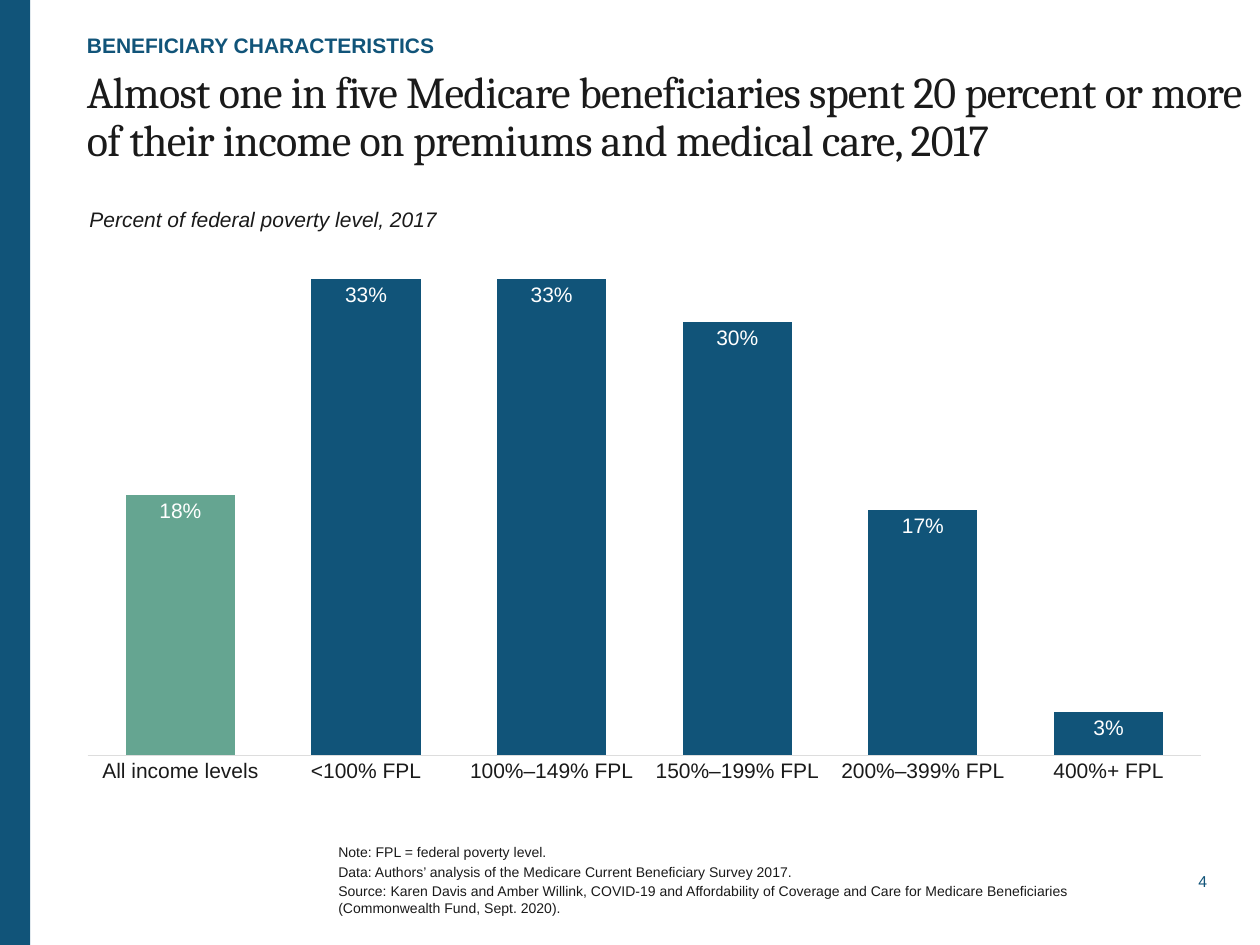
from lxml import etree
from pptx import Presentation
from pptx.chart.data import CategoryChartData
from pptx.dml.color import RGBColor
from pptx.enum.chart import XL_CHART_TYPE, XL_LABEL_POSITION, XL_TICK_MARK
from pptx.enum.shapes import MSO_SHAPE
from pptx.enum.text import MSO_ANCHOR, MSO_AUTO_SIZE, PP_ALIGN
from pptx.oxml.ns import qn
from pptx.util import Pt

COLORS = {
    "blue": "115479",
    "green": "65A591",
    "ink": "1A1A1A",
    "axis": "DDDDDD",
    "white": "FFFFFF",
}


class SlideBuilder:
    """Holds the style and the current slide."""

    def __init__(self, presentation, layout):
        self.slide = presentation.slides.add_slide(layout)

    def color(self, name):
        return RGBColor.from_string(COLORS[name])

    def style_font(self, font, color="ink", **values):
        settings = {"name": "Arial", "size": 12, **values}
        settings["size"] = Pt(settings["size"])
        for name, value in settings.items():
            setattr(font, name, value)
        font.color.rgb = self.color(color)

    def place(self, shape, box):
        for name, value in zip(("left", "top", "width", "height"), box):
            setattr(shape, name, Pt(value))

    def bar(self, box, color):
        shape = self.slide.shapes.add_shape(MSO_SHAPE.RECTANGLE, *map(Pt, box))
        shape.shadow.inherit = False
        shape.fill.solid()
        shape.fill.fore_color.rgb = self.color(color)
        shape.line.fill.background()

    def fill_text(self, shape, paragraphs, anchor=MSO_ANCHOR.TOP, wrap=True,
                  align=PP_ALIGN.LEFT, line_spacing=1.0, gap=0, tracking=0, **font):
        frame = shape.text_frame
        frame_values = {
            "word_wrap": wrap, "auto_size": MSO_AUTO_SIZE.NONE,
            "vertical_anchor": anchor, "margin_left": 0, "margin_top": 0,
            "margin_right": 0, "margin_bottom": 0,
        }
        for name, value in frame_values.items():
            setattr(frame, name, value)
        for index, text in enumerate(paragraphs):
            paragraph = frame.add_paragraph() if index else frame.paragraphs[0]
            paragraph.alignment = align
            paragraph.line_spacing = line_spacing
            paragraph.space_before = Pt(gap if index else 0)
            run = paragraph.add_run()
            run.text = text
            self.style_font(run.font, **font)
            if tracking:
                run.font._element.set("spc", str(int(tracking * 100)))

    def placeholder(self, index, box, text, **style):
        shape = self.slide.placeholders[index]
        self.place(shape, box)
        self.fill_text(shape, [text], **style)

    def text(self, box, paragraphs, **style):
        shape = self.slide.shapes.add_textbox(*map(Pt, box))
        self.fill_text(shape, paragraphs, **style)

    def column_chart(self, box, values, color, highlight, maximum, plot):
        data = CategoryChartData(number_format="0%")
        data.categories = list(values)
        data.add_series("Series 1", values.values())
        chart = self.slide.shapes.add_chart(
            XL_CHART_TYPE.COLUMN_CLUSTERED, *map(Pt, box), data).chart
        chart.has_legend = chart.has_title = False
        self.style_font(chart.font, size=10)

        # Axes
        category_axis, value_axis = chart.category_axis, chart.value_axis
        category_axis.major_tick_mark = XL_TICK_MARK.NONE
        category_axis.format.line.color.rgb = self.color("axis")
        category_axis.format.line.width = Pt(0.75)
        self.style_font(category_axis.tick_labels.font)
        axis_values = {
            "visible": False, "has_major_gridlines": False,
            "minimum_scale": 0, "maximum_scale": maximum,
        }
        for name, value in axis_values.items():
            setattr(value_axis, name, value)

        # Columns, with the first one set apart
        columns = chart.plots[0]
        columns.gap_width = 70
        columns.vary_by_categories = False
        series = columns.series[0]
        for part, name in ((series, color), (series.points[0], highlight)):
            part.format.fill.solid()
            part.format.fill.fore_color.rgb = self.color(name)

        # Value labels
        labels = series.data_labels
        label_values = {
            "show_value": True, "position": XL_LABEL_POSITION.INSIDE_END,
            "number_format": "0%", "number_format_is_linked": False,
        }
        for name, value in label_values.items():
            setattr(labels, name, value)
        self.style_font(labels.font, color="white")

        # Fixed inner plot area
        plot_area = chart._chartSpace.chart.plotArea
        for old in plot_area.findall(qn("c:layout")):
            plot_area.remove(old)
        layout = etree.Element(qn("c:layout"))
        plot_area.insert(0, layout)
        manual = etree.SubElement(layout, qn("c:manualLayout"))
        settings = {"layoutTarget": "inner", "xMode": "edge", "yMode": "edge",
                    **dict(zip("xywh", plot))}
        for name, value in settings.items():
            etree.SubElement(manual, qn(f"c:{name}")).set("val", str(value))


def main():
    presentation = Presentation()
    presentation.slide_width, presentation.slide_height = Pt(720), Pt(540)
    builder = SlideBuilder(presentation, presentation.slide_layouts[0])

    # Side band and page number
    builder.bar((0, 0, 17.3, 540), "blue")
    builder.text((667.5, 495.4, 22.3, 15.8), ["4"], anchor=MSO_ANCHOR.MIDDLE,
                 wrap=False, align=PP_ALIGN.RIGHT, size=9, color="blue")

    # Headings
    builder.placeholder(
        0, (49.7, 40.3, 664.6, 57.6),
        "Almost one in five Medicare beneficiaries spent 20 percent or more "
        "of their income on premiums and medical care, 2017",
        line_spacing=0.9, tracking=-0.4, name="Cambria", size=25.2)
    builder.placeholder(
        1, (49.7, 13.7, 623.5, 19.4), "BENEFICIARY CHARACTERISTICS",
        anchor=MSO_ANCHOR.BOTTOM, color="blue", bold=True)

    # Chart and its caption
    spending_shares = {
        "All income levels": 0.18,
        "<100% FPL": 0.33,
        "100%–149% FPL": 0.33,
        "150%–199% FPL": 0.30,
        "200%–399% FPL": 0.17,
        "400%+ FPL": 0.03,
    }
    builder.column_chart((49.7, 129.6, 637.2, 331.9), spending_shares, "blue",
                         "green", maximum=0.35, plot=(0, 0.04, 1, 0.87))
    builder.text((51.1, 118.1, 223.9, 18),
                 ["Percent of federal poverty level, 2017"], italic=True)

    # Notes and source
    builder.text(
        (193.3, 472.3, 474.5, 61.2),
        ["Note: FPL = federal poverty level.",
         "Data: Authors’ analysis of the Medicare Current Beneficiary Survey 2017.",
         "Source: Karen Davis and Amber Willink, COVID-19 and Affordability of "
         "Coverage and Care for Medicare Beneficiaries "
         "(Commonwealth Fund, Sept. 2020)."],
        anchor=MSO_ANCHOR.MIDDLE, gap=1.6, size=8)

    presentation.save("out.pptx")


if __name__ == "__main__":
    main()
